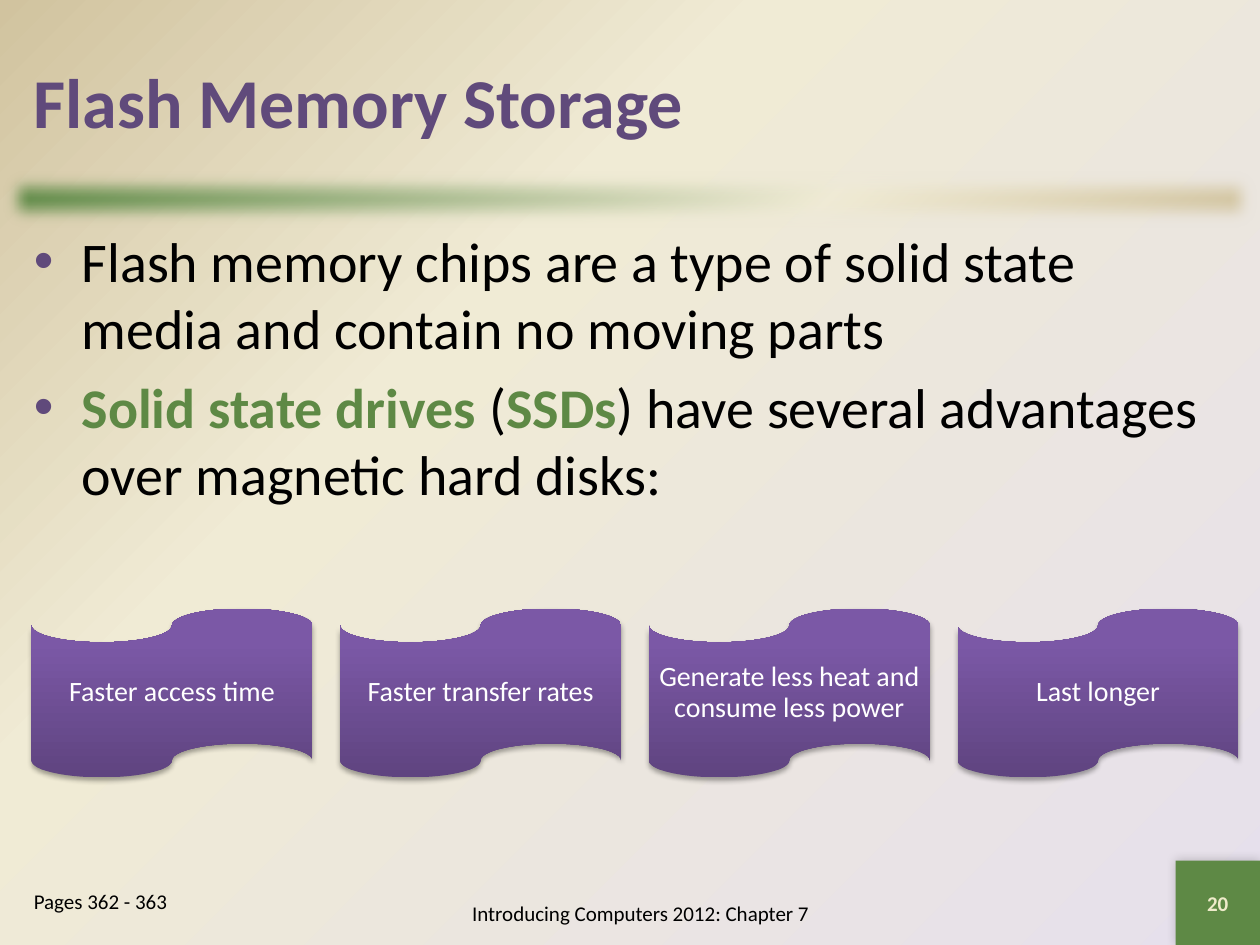
from lxml.etree import SubElement
from pptx import Presentation
from pptx.dml.color import RGBColor
from pptx.enum.shapes import MSO_SHAPE
from pptx.enum.text import MSO_ANCHOR, PP_ALIGN
from pptx.oxml.ns import qn
from pptx.util import Inches, Pt

PURPLE, GREEN, CREAM = "604A7B", "5E8945", "EEEBCA"
BLACK, WHITE = "000000", "FFFFFF"
SAND_STOPS = [(65, "F0EBD5"), (100, "D1C39F")]
TAPE_STOPS = [(0, "5F4480"), (80, "7B58A6"), (100, "7C57A8")]


def color(value):
    return RGBColor.from_string(value)


def add_xml(parent, tag, **attributes):
    values = {name: str(value) for name, value in attributes.items()}
    return SubElement(parent, qn(tag), values)


def add_color(parent, value, opacity=100):
    node = add_xml(parent, "a:srgbClr", val=value)
    if opacity < 100:
        add_xml(node, "a:alpha", val=opacity * 1000)


def set_gradient(properties, stops, angle=None):
    """Turn a solid fill into a linear gradient, or a circular one without an angle."""
    solid = properties.find(qn("a:solidFill"))
    gradient = add_xml(properties, "a:gradFill", rotWithShape=1)
    properties.replace(solid, gradient)
    stop_list = add_xml(gradient, "a:gsLst")
    for position, value in stops:
        add_color(add_xml(stop_list, "a:gs", pos=position * 1000), value)
    if angle is None:
        circle = add_xml(gradient, "a:path", path="circle")
        add_xml(circle, "a:fillToRect", l=100000, t=100000)
    else:
        add_xml(gradient, "a:lin", ang=angle * 60000, scaled=0)


class SlideBuilder:
    font = "Calibri"

    def __init__(self, slide):
        self.slide = slide

    def background(self, stops):
        self.slide.background.fill.solid()
        set_gradient(self.slide.element.find(".//" + qn("p:bgPr")), stops)

    def shape(self, kind, left, top, width, height, fill=WHITE, stops=None, angle=0):
        shape = self.slide.shapes.add_shape(
            kind, Inches(left), Inches(top), Inches(width), Inches(height))
        shape.fill.solid()
        shape.fill.fore_color.rgb = color(fill)
        shape.line.fill.background()
        shape.shadow.inherit = False
        if stops:
            set_gradient(shape.element.spPr, stops, angle)
        return shape

    def soft_edge(self, shape, radius):
        effects = shape.element.spPr.find(qn("a:effectLst"))
        add_xml(effects, "a:softEdge", rad=Pt(radius))

    def shadow(self, shape, opacity, blur, distance, direction):
        effects = shape.element.spPr.find(qn("a:effectLst"))
        node = add_xml(effects, "a:outerShdw", blurRad=Pt(blur), dist=Pt(distance),
                       dir=direction * 60000, rotWithShape=0)
        add_color(node, BLACK, opacity)

    def textbox(self, left, top, width, height, anchor=MSO_ANCHOR.TOP):
        box = self.slide.shapes.add_textbox(
            Inches(left), Inches(top), Inches(width), Inches(height))
        box.text_frame.word_wrap = True
        box.text_frame.vertical_anchor = anchor
        return box

    def style(self, paragraph, size, value, bold=False, align=PP_ALIGN.LEFT):
        paragraph.alignment = align
        paragraph.font.name = self.font
        paragraph.font.size = Pt(size)
        paragraph.font.bold = bold
        paragraph.font.color.rgb = color(value)

    def set_text(self, shape, text, size, value, **options):
        paragraph = shape.text_frame.paragraphs[0]
        paragraph.text = text
        self.style(paragraph, size, value, **options)
        return paragraph

    def bullets(self, box, items, size):
        """Each item is a list of (text, is_key_term) pairs."""
        frame = box.text_frame
        for index, item in enumerate(items):
            paragraph = frame.add_paragraph() if index else frame.paragraphs[0]
            self.style(paragraph, size, BLACK)
            paragraph.space_before = Pt(size * 0.2)
            properties = paragraph._p.get_or_add_pPr()
            properties.set("marL", str(Inches(0.38)))
            properties.set("indent", str(-Inches(0.38)))
            bullet_color = add_xml(properties, "a:buClr")
            add_color(bullet_color, PURPLE)
            bullet_font = add_xml(properties, "a:buFont", typeface="Arial")
            bullet = add_xml(properties, "a:buChar", char="•")
            defaults = properties.find(qn("a:defRPr"))
            for node in (bullet_color, bullet_font, bullet):
                defaults.addprevious(node)
            for text, is_key_term in item:
                run = paragraph.add_run()
                run.text = text
                run.font.name = self.font
                run.font.size = Pt(size)
                run.font.bold = is_key_term
                run.font.color.rgb = color(GREEN if is_key_term else BLACK)

    def tape(self, left, text):
        tape = self.shape(MSO_SHAPE.FLOWCHART_PUNCHED_TAPE, left, 4.83, 2.23, 1.34,
                          stops=TAPE_STOPS, angle=270)
        self.shadow(tape, 35, 3.1, 1.8, 90)
        frame = tape.text_frame
        frame.word_wrap = True
        frame.vertical_anchor = MSO_ANCHOR.MIDDLE
        frame.margin_left = frame.margin_right = Inches(0.07)
        frame.margin_top = frame.margin_bottom = Inches(0.07)
        paragraph = self.set_text(tape, text, 16, WHITE, align=PP_ALIGN.CENTER)
        paragraph.line_spacing = 0.9
        paragraph.space_after = Pt(5.6)


def main():
    presentation = Presentation()
    presentation.slide_width, presentation.slide_height = Inches(10), Inches(7.5)
    builder = SlideBuilder(presentation.slides.add_slide(presentation.slide_layouts[6]))

    # Background and divider
    builder.background([(0, "E6E0EC")] + SAND_STOPS)
    divider = builder.shape(MSO_SHAPE.RECTANGLE, 0, 1.33, 10, 0.5,
                            stops=[(0, GREEN)] + SAND_STOPS, angle=45)
    builder.soft_edge(divider, 10)

    # Title
    title = builder.textbox(0.17, 0.17, 9.67, 1.25, MSO_ANCHOR.MIDDLE)
    builder.set_text(title, "Flash Memory Storage", 40, PURPLE, bold=True)

    # Body
    body = builder.textbox(0.17, 1.75, 9.67, 5.08)
    builder.bullets(body, [
        [("Flash memory chips are a type of solid state media "
          "and contain no moving parts", False)],
        [("Solid state drives ", True), ("(", False), ("SSDs", True),
         (") have several advantages over magnetic hard disks:", False)],
    ], 32)

    # Advantages
    advantages = ["Faster access time", "Faster transfer rates",
                  "Generate less heat and consume less power", "Last longer"]
    for index, advantage in enumerate(advantages):
        builder.tape(0.25 + 2.45 * index, advantage)

    # Footer and slide number
    pages = builder.textbox(0.17, 7, 1.83, 0.5)
    builder.set_text(pages, "Pages 362 - 363", 12, BLACK).space_before = Pt(2.4)
    footer = builder.textbox(3, 7, 4.17, 0.5, MSO_ANCHOR.MIDDLE)
    builder.set_text(footer, "Introducing Computers 2012: Chapter 7", 12, BLACK,
                     align=PP_ALIGN.CENTER)
    number = builder.shape(MSO_SHAPE.RECTANGLE, 9.33, 6.83, 0.67, 0.67, fill=GREEN)
    builder.shadow(number, 20, 6, 0, 225)
    number.text_frame.vertical_anchor = MSO_ANCHOR.MIDDLE
    builder.set_text(number, "20", 12, CREAM, bold=True, align=PP_ALIGN.CENTER)

    presentation.save("out.pptx")


if __name__ == "__main__":
    main()
